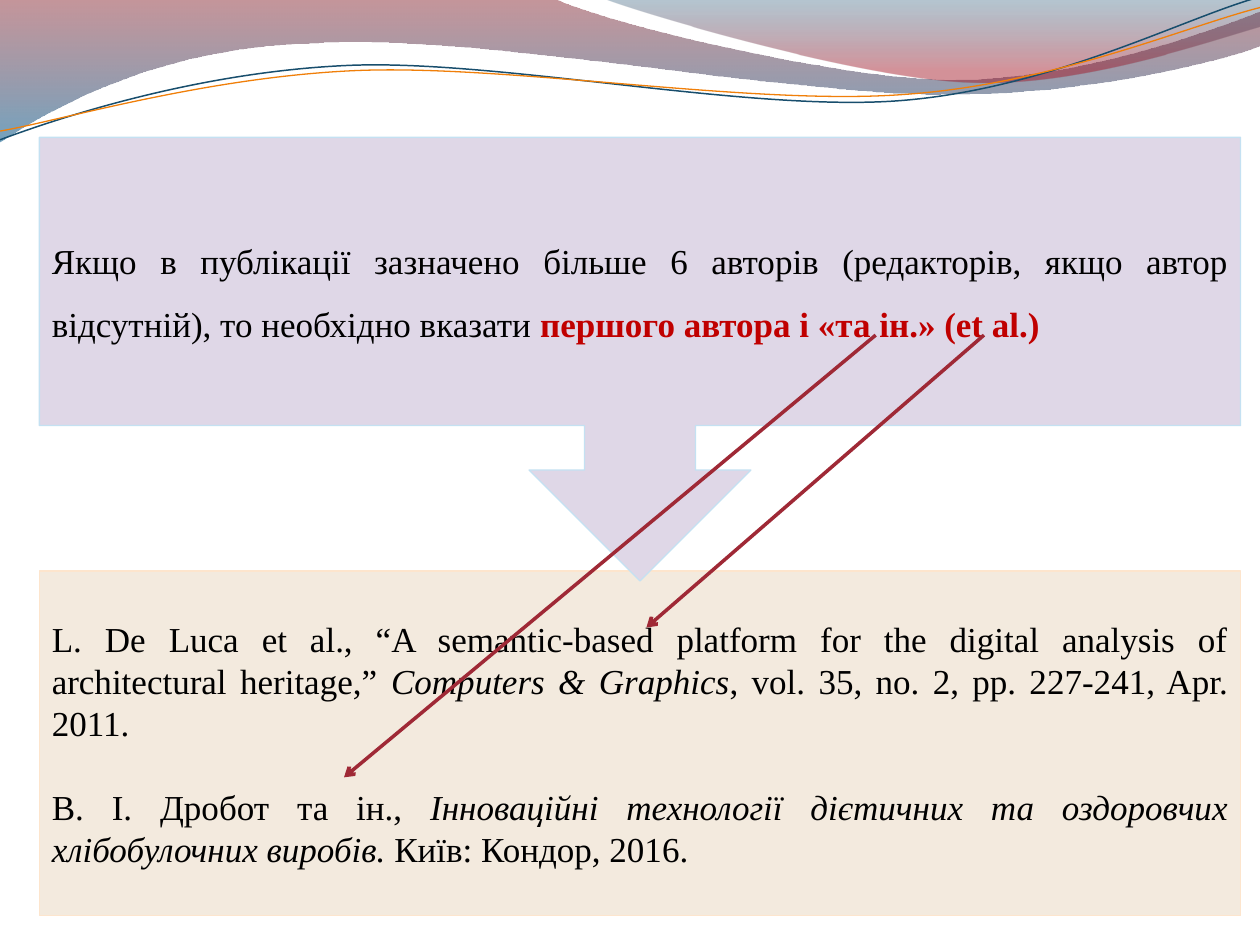
from lxml import etree
from pptx import Presentation, util as u
from pptx.dml.color import RGBColor
from pptx.enum import shapes, text
from pptx.oxml.ns import qn

COLORS = {
    "text": "000000", "accent": "C00000", "arrow": "9F2936",
    "rule": "DFD7E7", "rule_edge": "C4E1F2",
    "example": "F3EADE", "example_edge": "FDE5CD",
    "wine": "7E1621", "sea": "005689", "navy": "094467", "red": "A10F1F",
    "blue_curve": "184E6D", "orange_curve": "F07F09",
}


class SlideBuilder:
    font = "Times New Roman"
    size = 20

    def __init__(self, slide):
        self.slide = slide

    def color(self, name):
        return RGBColor.from_string(COLORS[name])

    def outline(self, line, name, width):
        line.color.rgb = self.color(name)
        line.width = u.Pt(width)

    def freeform(self, start, segments, closed):
        """Segments of 2 numbers are lines, segments of 6 are Bezier curves."""
        points = [(u.Pt(x), u.Pt(y)) for segment in segments
                  for x, y in zip(segment[::2], segment[1::2])]
        builder = self.slide.shapes.build_freeform(*map(u.Pt, start))
        builder.add_line_segments(points, close=closed)
        shape = builder.convert_to_shape()
        shape.shadow.inherit = False
        # Join the three points of each curve into one Bezier element
        steps = iter(list(shape._element.spPr.iter(qn("a:lnTo"))))
        for segment in segments:
            first = next(steps)
            if len(segment) == 6:
                bezier = etree.Element(qn("a:cubicBezTo"))
                first.addprevious(bezier)
                for step in (first, next(steps), next(steps)):
                    bezier.append(step[0])
                    step.getparent().remove(step)
        return shape

    def wave(self, start, segments, stops):
        shape = self.freeform(start, segments, True)
        shape.line.fill.background()
        shape.fill.gradient()
        shape.fill.gradient_angle = 270
        for stop, (position, name, _) in zip(shape.fill.gradient_stops, stops):
            stop.position = position
            stop.color.rgb = self.color(name)
        # Opacity of each gradient stop
        for rgb, (_, _, opacity) in zip(shape._element.spPr.iter(qn("a:srgbClr")), stops):
            etree.SubElement(rgb, qn("a:alpha")).set("val", str(opacity * 1000))

    def curve(self, start, segments, name, width):
        shape = self.freeform(start, segments, False)
        shape.fill.background()
        self.outline(shape.line, name, width)

    def panel(self, kind, box, name, paragraphs, spacing=1, gap=0):
        shape = self.slide.shapes.add_shape(kind, *map(u.Pt, box))
        shape.shadow.inherit = False
        shape.fill.solid()
        shape.fill.fore_color.rgb = self.color(name)
        self.outline(shape.line, name + "_edge", 0.75)
        frame = shape.text_frame
        frame.word_wrap = True
        frame.vertical_anchor = text.MSO_ANCHOR.MIDDLE
        for index, runs in enumerate(paragraphs):
            paragraph = frame.add_paragraph() if index else frame.paragraphs[0]
            paragraph.alignment = text.PP_ALIGN.JUSTIFY
            paragraph.line_spacing = spacing
            if index:
                paragraph.space_before = u.Pt(gap)
            paragraph.font.name = self.font
            paragraph.font.size = u.Pt(self.size)
            for words, style in runs:
                run = paragraph.add_run()
                run.text = words
                run.font.color.rgb = self.color("accent" if style == "accent" else "text")
                if style == "accent":
                    run.font.bold = True
                elif style == "title":
                    run.font.italic = True

    def arrow(self, start, end):
        line = self.slide.shapes.add_connector(
            shapes.MSO_CONNECTOR.STRAIGHT, *map(u.Pt, start + end))
        self.outline(line.line, "arrow", 2)
        etree.SubElement(line.line._get_or_add_ln(), qn("a:tailEnd")).set("type", "arrow")
        etree.SubElement(line._element.spPr, qn("a:effectLst"))


def main():
    deck = Presentation()
    deck.slide_width, deck.slide_height = u.Pt(720), u.Pt(540)
    page = SlideBuilder(deck.slides.add_slide(deck.slide_layouts[6]))

    # Waves along the top edge
    page.wave((0, 0), [
        (316.8, -0.7),
        (342.7, 12.2, 478.1, 45.4, 545.8, 45.4),
        (614.2, 45.4, 689.8, 18.7, 720, 6.5),
        (720.7, 25.9),
        (707.8, 31.7, 626.4, 54.7, 537.1, 54),
        (447.8, 54, 275, 20.2, 185, 24.5),
        (92.9, 25.9, 33.1, 59.8, -0.7, 81.4),
    ], [(0, "wine", 45), (1, "sea", 55)])
    page.wave((344.9, -0.7), [
        (366.5, 7.9, 491, 44.6, 553.7, 46.8),
        (616.3, 49.7, 691.9, 23, 720, 15.1),
        (720, 0),
    ], [(0, "navy", 30), (0.8, "red", 45)])

    # Thin curves under the waves
    page.curve((0, 79.9), [
        (34.6, 67, 113.8, 41, 199.4, 37.4),
        (284.4, 33.8, 427, 64.1, 513.4, 57.6),
        (599.8, 51.1, 675.4, 10.8, 718.6, -1.4),
    ], "blue_curve", 0.85)
    page.curve((0, 74.9), [
        (33.8, 69.1, 118.1, 43.9, 203.8, 40.3),
        (290.2, 36.7, 429.8, 60.5, 516.2, 54),
        (601.9, 48.2, 677.5, 15.1, 720, 4.3),
    ], "orange_curve", 0.75)

    # Examples, then the rule that points to them
    left, width = 22.5, 686.4
    page.panel(shapes.MSO_SHAPE.RECTANGLE, (left, 326.3, width, 197), "example", [
        [("L. De Luca et al., “A semantic-based platform for the digital analysis "
          "of architectural heritage,” ", "plain"),
         ("Computers & Graphics", "title"),
         (", vol. 35, no. 2, pp. 227-241, Apr. 2011.", "plain")],
        [("В. І. Дробот та ін., ", "plain"),
         ("Інноваційні технології дієтичних та оздоровчих хлібобулочних виробів.", "title"),
         (" Київ: Кондор, 2016.", "plain")],
    ], gap=24)
    page.panel(shapes.MSO_SHAPE.DOWN_ARROW_CALLOUT, (left, 78.5, width, 253.5), "rule", [
        [("Якщо в публікації зазначено більше 6 авторів (редакторів, якщо автор "
          "відсутній), то необхідно вказати ", "plain"),
         ("першого автора і «та ін.» (et al.)", "accent")],
    ], spacing=1.5)

    # Arrows from each abbreviation to its example
    page.arrow((500.4, 191.5), (196.6, 444.2))
    page.arrow((562.3, 191.5), (369.4, 358.6))

    deck.save("out.pptx")


if __name__ == "__main__":
    main()
